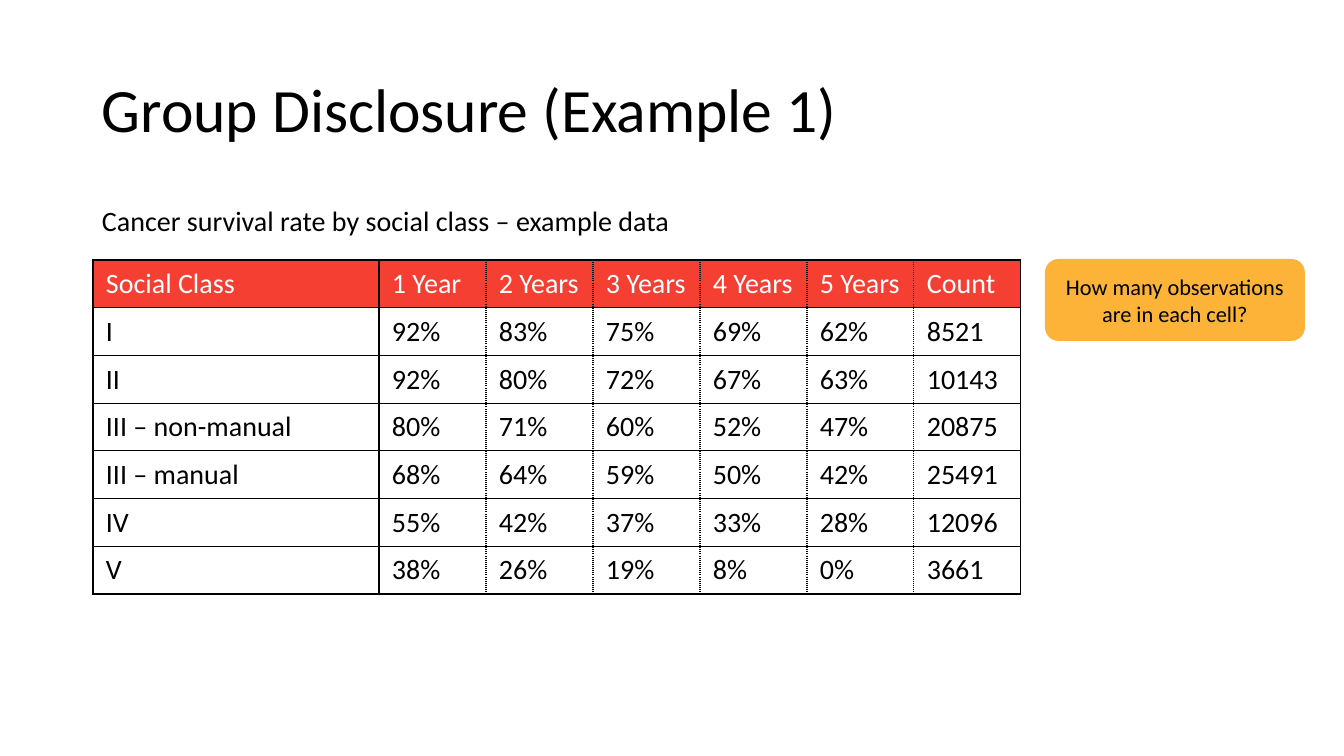
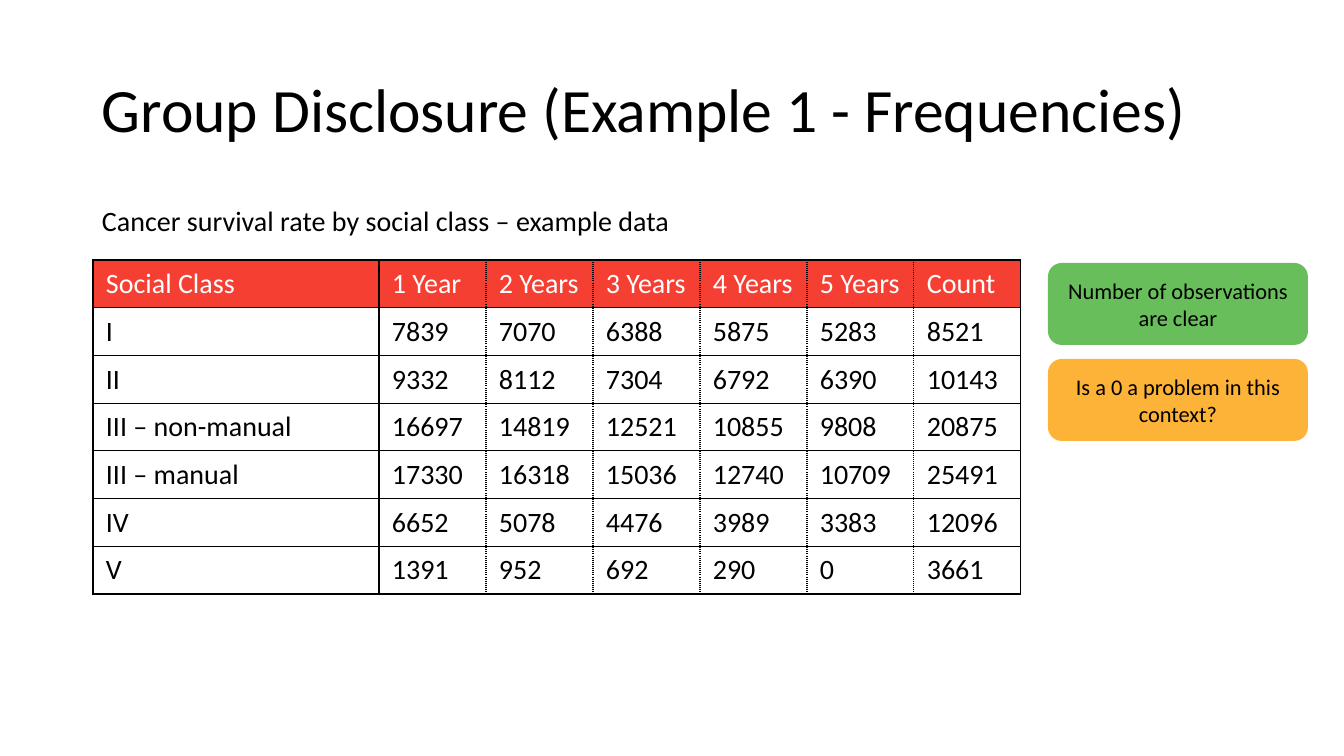
"""Build two slides on group disclosure, each with a table and callouts."""
from lxml import etree
from pptx import Presentation
from pptx import util as u
from pptx.dml.color import RGBColor
from pptx.enum import shapes, text
from pptx.oxml.ns import qn

COLORS = {"ink": "000000", "paper": "FFFFFF", "header": "F53F33",
          "question": "FDB338", "answer": "68BE5B"}
FONT = "Calibri"
SLIDE_W, SLIDE_H = 1344, 756
MARGIN, CONTENT_W = 92, 1159
TABLE_LEFT, TABLE_TOP, TABLE_H = 93, 260, 334
CLASS_W, VALUE_W = 286, 107
CALLOUT_W, CALLOUT_H, CALLOUT_STEP = 260, 82, 96
SUBTITLE = "Cancer survival rate by social class – example data"
HEADER = ["Social Class", "1 Year", "2 Years", "3 Years", "4 Years", "5 Years", "Count"]
CLASSES = ["I", "II", "III – non-manual", "III – manual", "IV", "V"]
COUNTS = [8521, 10143, 20875, 25491, 12096, 3661]
RATES = [[92, 83, 75, 69, 62], [92, 80, 72, 67, 63], [80, 71, 60, 52, 47],
         [68, 64, 59, 50, 42], [55, 42, 37, 33, 28], [38, 26, 19, 8, 0]]
FREQUENCIES = [[7839, 7070, 6388, 5875, 5283], [9332, 8112, 7304, 6792, 6390],
               [16697, 14819, 12521, 10855, 9808], [17330, 16318, 15036, 12740, 10709],
               [6652, 5078, 4476, 3989, 3383], [1391, 952, 692, 290, 0]]


def px(n):
    """Turn pixels into EMU."""
    return u.Emu(round(n * 914400 / 100.8))


def rgb(name):
    """Look up a palette colour."""
    return RGBColor.from_string(COLORS[name])


def add_run(p, words, size, color="ink"):
    """Add one styled run to a paragraph."""
    r = p.add_run()
    r.text = words
    r.font.name, r.font.size = FONT, u.Pt(size)
    r.font.color.rgb = rgb(color)


def add_text(s, words, top, height, size, anchor):
    """Add a text box across the content width."""
    tf = s.shapes.add_textbox(px(MARGIN), px(top), px(CONTENT_W), px(height)).text_frame
    tf.word_wrap = True
    tf.vertical_anchor = anchor
    p = tf.paragraphs[0]
    p.line_spacing = 0.9
    add_run(p, words, size)


def add_callout(s, words, left, top, color):
    """Add a rounded callout with centred text."""
    sp = s.shapes.add_shape(shapes.MSO_SHAPE.ROUNDED_RECTANGLE, px(left), px(top),
                            px(CALLOUT_W), px(CALLOUT_H))
    sp.shadow.inherit = False
    sp.fill.solid()
    sp.fill.fore_color.rgb = rgb(color)
    sp.line.fill.background()
    tf = sp.text_frame
    tf.word_wrap = True
    tf.vertical_anchor = text.MSO_ANCHOR.MIDDLE
    p = tf.paragraphs[0]
    p.alignment = text.PP_ALIGN.CENTER
    add_run(p, words, 16)


def add_border(cell, side, dash):
    """Draw one side of a cell."""
    ln = etree.SubElement(cell._tc.get_or_add_tcPr(), qn(f"a:ln{side}"), w=str(u.Pt(1)))
    fill = etree.SubElement(ln, qn("a:solidFill"))
    etree.SubElement(fill, qn("a:srgbClr"), val=COLORS["ink"])
    etree.SubElement(ln, qn("a:prstDash"), val=dash)


def style_cell(cell, col, last, is_header):
    """Set the margins, borders and fill of a cell."""
    cell.margin_left = cell.margin_right = px(13)
    cell.margin_top, cell.margin_bottom = px(7), px(6)
    add_border(cell, "L", "solid" if col <= 1 else "sysDot")
    add_border(cell, "R", "solid" if col in (0, last) else "sysDot")
    add_border(cell, "T", "solid")
    add_border(cell, "B", "solid")
    if is_header:
        cell.fill.solid()
        cell.fill.fore_color.rgb = rgb("header")
    else:
        cell.fill.background()


def add_data_table(s, values, suffix):
    """Add the table of survival by social class."""
    rows = [HEADER]
    for name, numbers, count in zip(CLASSES, values, COUNTS):
        rows.append([name, *(f"{n}{suffix}" for n in numbers), str(count)])
    last = len(HEADER) - 1
    table = s.shapes.add_table(len(rows), len(HEADER), px(TABLE_LEFT), px(TABLE_TOP),
                               px(CLASS_W + last * VALUE_W), px(TABLE_H)).table
    table.first_row = table.horz_banding = False
    for i, column in enumerate(table.columns):
        column.width = px(VALUE_W if i else CLASS_W)
    for i, row in enumerate(rows):
        table.rows[i].height = px(TABLE_H) // len(rows)
        for j, words in enumerate(row):
            cell = table.cell(i, j)
            style_cell(cell, j, last, i == 0)
            add_run(cell.text_frame.paragraphs[0], words, 20, "ink" if i else "paper")


def add_slide(prs, title, values, suffix, left, top, callouts):
    """Add a slide with title, subtitle, table and stacked callouts."""
    s = prs.slides.add_slide(prs.slide_layouts[6])
    add_text(s, title, 40, 146, 44, text.MSO_ANCHOR.MIDDLE)
    add_text(s, SUBTITLE, 202, 480, 20, text.MSO_ANCHOR.TOP)
    add_data_table(s, values, suffix)
    for i, (words, color) in enumerate(callouts):
        add_callout(s, words, left, top + i * CALLOUT_STEP, color)


def main():
    """Build and save the presentation."""
    prs = Presentation()
    prs.slide_width, prs.slide_height = px(SLIDE_W), px(SLIDE_H)
    add_slide(prs, "Group Disclosure (Example 1)", RATES, "%", 1045, 259,
              [("How many observations are in each cell?", "question")])
    add_slide(prs, "Group Disclosure (Example 1 - Frequencies)", FREQUENCIES, "", 1048, 263,
              [("Number of observations are clear", "answer"),
               ("Is a 0 a problem in this context?", "question")])
    prs.save("out.pptx")


if __name__ == "__main__":
    main()
